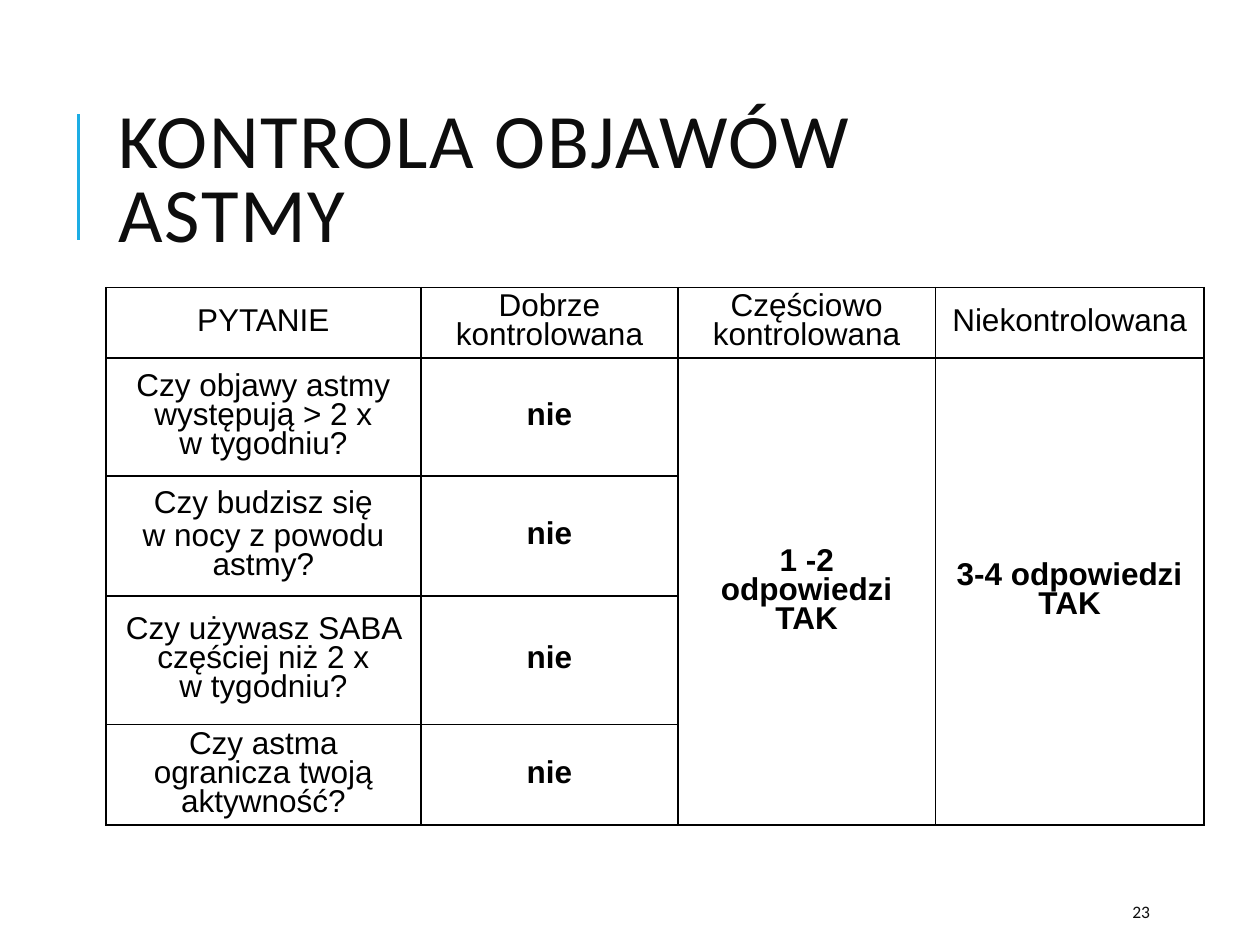
import pptx
import pptx.dml.color
import pptx.enum.shapes
import pptx.enum.text
import pptx.oxml
import pptx.oxml.ns
import pptx.util

Pt = pptx.util.Pt
ALIGN = pptx.enum.text.PP_ALIGN
MIDDLE = pptx.enum.text.MSO_ANCHOR.MIDDLE


def color(value):
    return pptx.dml.color.RGBColor.from_string(value)


class SlideBuilder:
    heading_font = "Calibri"
    table_font = "Arial"
    ink = "0D0D0D"
    black = "000000"
    accent = "1CADE4"

    def __init__(self, slide):
        self.slide = slide

    def run(self, paragraph, text, font, size, ink, bold=False):
        run = paragraph.add_run()
        run.text = text
        run.font.name = font
        run.font.size = Pt(size)
        run.font.bold = bold
        run.font.color.rgb = color(ink)
        return run

    def title(self, text, left, top, width, height):
        heading = self.slide.shapes.title
        heading.left, heading.top = Pt(left), Pt(top)
        heading.width, heading.height = Pt(width), Pt(height)
        frame = heading.text_frame
        frame.word_wrap = True
        frame.auto_size = pptx.enum.text.MSO_AUTO_SIZE.NONE
        frame.vertical_anchor = MIDDLE
        paragraph = frame.paragraphs[0]
        paragraph.alignment = ALIGN.LEFT
        paragraph.line_spacing = 0.8
        run = self.run(paragraph, text, self.heading_font, 44, self.ink)
        run.font._element.set("spc", "100")

    def line(self, x1, y1, x2, y2):
        rule = self.slide.shapes.add_connector(
            pptx.enum.shapes.MSO_CONNECTOR.STRAIGHT, Pt(x1), Pt(y1), Pt(x2), Pt(y2))
        rule.line.color.rgb = color(self.accent)
        rule.line.width = Pt(1.5)
        properties = rule._element.spPr
        properties.append(properties.makeelement(pptx.oxml.ns.qn("a:effectLst"), {}))

    def text(self, text, left, top, width, height):
        box = self.slide.shapes.add_textbox(Pt(left), Pt(top), Pt(width), Pt(height))
        frame = box.text_frame
        frame.word_wrap = True
        frame.vertical_anchor = MIDDLE
        self.run(frame.paragraphs[0], text, self.heading_font, 10, self.ink)

    def border(self, cell):
        properties = cell._tc.get_or_add_tcPr()
        for index, side in enumerate(("lnL", "lnR", "lnT", "lnB")):
            edge = pptx.oxml.parse_xml(
                f'<a:{side} {pptx.oxml.ns.nsdecls("a")} w="12700"><a:solidFill>'
                f'<a:srgbClr val="{self.black}"/></a:solidFill></a:{side}>')
            properties.insert(index, edge)

    def cell_text(self, cell, paragraphs, bold):
        frame = cell.text_frame
        for index, lines in enumerate(paragraphs):
            paragraph = frame.add_paragraph() if index else frame.paragraphs[0]
            paragraph.alignment = ALIGN.CENTER
            paragraph.line_spacing = 0.82
            paragraph.space_before = paragraph.space_after = Pt(1.1)
            for number, text in enumerate(lines):
                if number:
                    paragraph.add_line_break()
                self.run(paragraph, text, self.table_font, 18, self.black, bold)

    def table(self, rows, left, top, widths, heights):
        frame = self.slide.shapes.add_table(
            len(heights), len(widths), Pt(left), Pt(top), Pt(sum(widths)), Pt(sum(heights)))
        table = frame.table
        table.first_row = table.horz_banding = False
        for column, width in zip(table.columns, widths):
            column.width = Pt(width)
        for row, height in zip(table.rows, heights):
            row.height = Pt(height)
        for cell in table.iter_cells():
            cell.fill.background()
            cell.vertical_anchor = MIDDLE
            self.border(cell)
        for r, row in enumerate(rows):
            for c, paragraphs in enumerate(row):
                self.cell_text(table.cell(r, c), paragraphs, bold=r > 0 and c > 0)
        return table


def main():
    deck = pptx.Presentation()
    deck.slide_width, deck.slide_height = Pt(720), Pt(540)
    builder = SlideBuilder(deck.slides.add_slide(deck.slide_layouts[5]))

    builder.line(45, 137, 45, 65)
    builder.title("KONTROLA OBJAWÓW ASTMY", 60.5, 46, 574, 118)

    headers = ["PYTANIE", "Dobrze kontrolowana", "Częściowo kontrolowana", "Niekontrolowana"]
    questions = [
        [["Czy objawy astmy występują > 2 x", "w tygodniu?"]],
        [["Czy budzisz się"], ["w nocy z powodu astmy?"]],
        [["Czy używasz SABA częściej niż 2 x", "w tygodniu?"]],
        [["Czy astma ogranicza twoją aktywność?"]],
    ]
    rows = [[[[header]] for header in headers]]
    rows += [[question, [["nie"]]] for question in questions]
    rows[1] += [[["1 -2", "odpowiedzi TAK"]], [["3-4 odpowiedzi TAK"]]]
    control = builder.table(
        rows, 60.5, 164.3, [180, 147, 147, 153.5], [39.8, 67.5, 68.5, 73.4, 57.6])
    for column in (2, 3):
        control.cell(1, column).merge(control.cell(len(questions), column))

    builder.text("23", 640, 510, 57.5, 21.5)
    deck.save("out.pptx")


if __name__ == "__main__":
    main()
